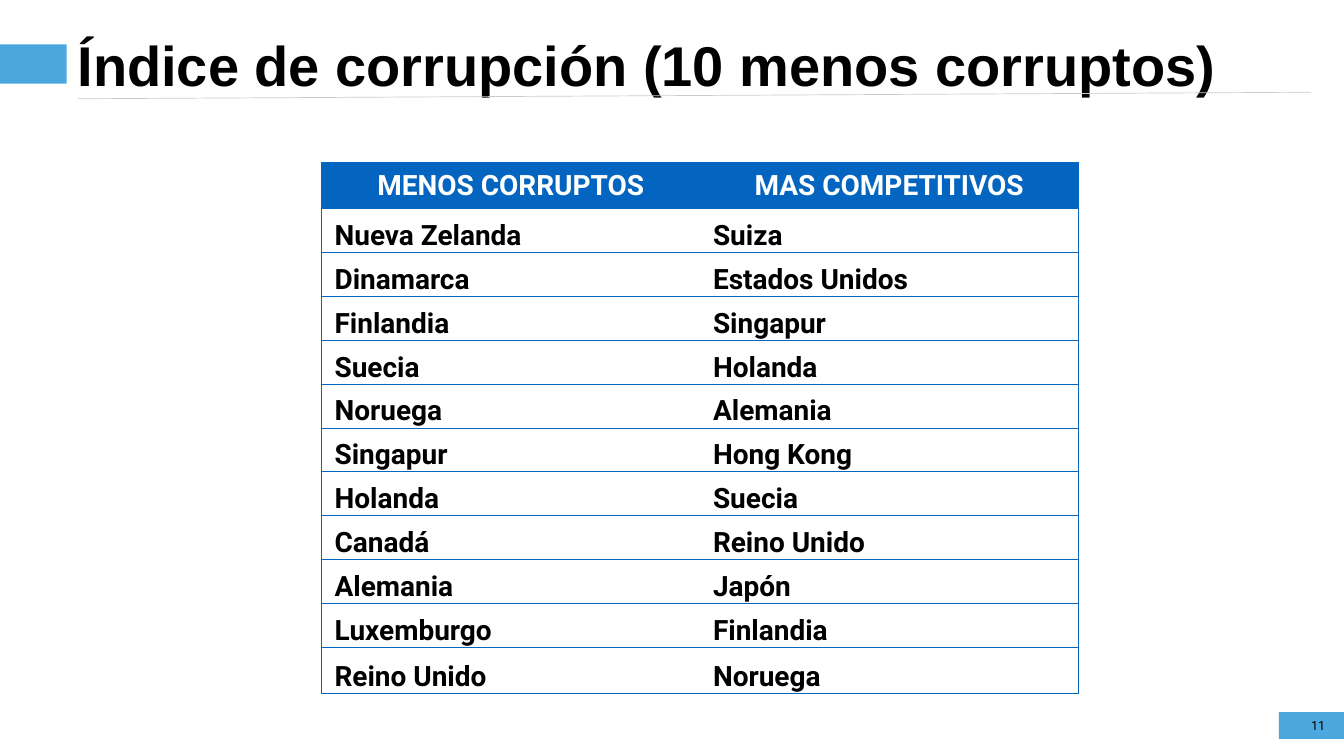
"""Build the slide that ranks the ten least corrupt countries."""
import pptx
import pptx.dml.color
import pptx.enum.shapes
import pptx.enum.text
import pptx.oxml.ns
import pptx.util
from lxml import etree

Inches = pptx.util.Inches
Pt = pptx.util.Pt
RGBColor = pptx.dml.color.RGBColor
ALIGN = pptx.enum.text.PP_ALIGN
ANCHOR = pptx.enum.text.MSO_ANCHOR
AUTO_SIZE = pptx.enum.text.MSO_AUTO_SIZE
qn = pptx.oxml.ns.qn

BLACK = RGBColor(0x00, 0x00, 0x00)
WHITE = RGBColor(0xFF, 0xFF, 0xFF)
SKY = RGBColor(0x4B, 0xA8, 0xDF)
BLUE = RGBColor(0x03, 0x65, 0xC0)
GREY = RGBColor(0xCB, 0xCB, 0xCB)

HEADERS = ("MENOS CORRUPTOS", "MAS COMPETITIVOS")
COUNTRIES = [
    ("Nueva Zelanda", "Suiza"),
    ("Dinamarca", "Estados Unidos"),
    ("Finlandia", "Singapur"),
    ("Suecia", "Holanda"),
    ("Noruega", "Alemania"),
    ("Singapur", "Hong Kong"),
    ("Holanda", "Suecia"),
    ("Canadá", "Reino Unido"),
    ("Alemania", "Japón"),
    ("Luxemburgo", "Finlandia"),
    ("Reino Unido", "Noruega"),
]


def write(tf, text, size, font="Roboto", color=BLACK, bold=False, align=ALIGN.LEFT, indent=None):
    """Put one formatted paragraph in a text frame."""
    p = tf.paragraphs[0]
    p.alignment = align
    if indent is not None:
        p.level = 1
        pPr = p._p.get_or_add_pPr()
        pPr.set("marL", "0")
        pPr.set("indent", str(Inches(indent)))
    r = p.add_run()
    r.text = text
    r.font.name = font
    r.font.size = Pt(size)
    r.font.bold = bold
    r.font.color.rgb = color


def fit_frame(tf, wrap, auto_size):
    """Remove the insets of a text frame and set how it fits its text."""
    tf.margin_left = tf.margin_top = tf.margin_right = tf.margin_bottom = 0
    tf.vertical_anchor = ANCHOR.MIDDLE
    tf.word_wrap = wrap
    tf.auto_size = auto_size


def add_title(s, text):
    """Place and format the title placeholder."""
    sp = s.shapes.title
    sp.left, sp.top, sp.width, sp.height = Inches(1.54), Inches(0.6), Inches(24.84), Inches(1.35)
    fit_frame(sp.text_frame, True, AUTO_SIZE.SHAPE_TO_FIT_TEXT)
    write(sp.text_frame, text, 80, font="Arial", bold=True)


def add_bar(s, left, top, height):
    """Add a sky-blue accent bar."""
    sp = s.shapes.add_shape(
        pptx.enum.shapes.MSO_SHAPE.RECTANGLE, Inches(left), Inches(top), Inches(1.32), Inches(height))
    sp.shadow.inherit = False
    sp.fill.solid()
    sp.fill.fore_color.rgb = SKY
    sp.line.fill.background()


def add_rule(s):
    """Add the thin line under the title."""
    line = s.shapes.add_connector(
        pptx.enum.shapes.MSO_CONNECTOR.STRAIGHT, Inches(1.54), Inches(1.96), Inches(26.02), Inches(1.83))
    line.line.color.rgb = GREY
    line.line.width = Pt(1)
    etree.SubElement(line._element.spPr, qn("a:effectLst"))


def add_page_number(s, text):
    """Add the page number."""
    sp = s.shapes.add_textbox(Inches(25.9), Inches(14.24), Inches(0.4), Inches(0.3))
    fit_frame(sp.text_frame, True, AUTO_SIZE.NONE)
    write(sp.text_frame, text, 18, align=ALIGN.RIGHT)


def set_borders(cell, sides):
    """Draw blue borders on the given sides of a cell and none on the others."""
    tcPr = cell._tc.get_or_add_tcPr()
    for side in "LRTB":
        ln = etree.SubElement(tcPr, qn(f"a:ln{side}"), w=str(Pt(1)))
        if side in sides:
            fill = etree.SubElement(ln, qn("a:solidFill"))
            etree.SubElement(fill, qn("a:srgbClr"), val=str(BLUE))
        else:
            etree.SubElement(ln, qn("a:noFill"))


def fill_cell(cell, text, header, sides):
    """Write and format one table cell."""
    cell.margin_left = cell.margin_top = cell.margin_right = Inches(0.01)
    cell.margin_bottom = 0
    set_borders(cell, sides)
    cell.fill.solid()
    cell.fill.fore_color.rgb = BLUE if header else WHITE
    cell.vertical_anchor = ANCHOR.MIDDLE if header else ANCHOR.BOTTOM
    if header:
        write(cell.text_frame, text, 40, color=WHITE, bold=True, align=ALIGN.CENTER)
    else:
        write(cell.text_frame, text, 40, bold=True, indent=0.25)


def add_ranking(s):
    """Add the two-column country table."""
    rows = [HEADERS] + COUNTRIES
    table = s.shapes.add_table(
        len(rows), 2, Inches(6.38), Inches(3.22), Inches(15.02), Inches(10.54)).table
    table.horz_banding = False
    for col in table.columns:
        col.width = Inches(7.51)
    for i, names in enumerate(rows):
        table.rows[i].height = Inches(0.92 if i in (0, len(rows) - 1) else 0.87)
        for j, name in enumerate(names):
            fill_cell(table.cell(i, j), name, i == 0, ("LTB", "RTB")[j])


def main():
    """Build and save the slide."""
    prs = pptx.Presentation()
    prs.slide_width, prs.slide_height = Inches(26.67), Inches(15)
    s = prs.slides.add_slide(prs.slide_layouts[5])
    add_title(s, "Índice de corrupción (10 menos corruptos)")
    add_bar(s, 0, 0.88, 0.78)
    add_bar(s, 25.38, 14.13, 0.53)
    add_rule(s)
    add_page_number(s, "11")
    add_ranking(s)
    prs.save("out.pptx")


if __name__ == "__main__":
    main()
